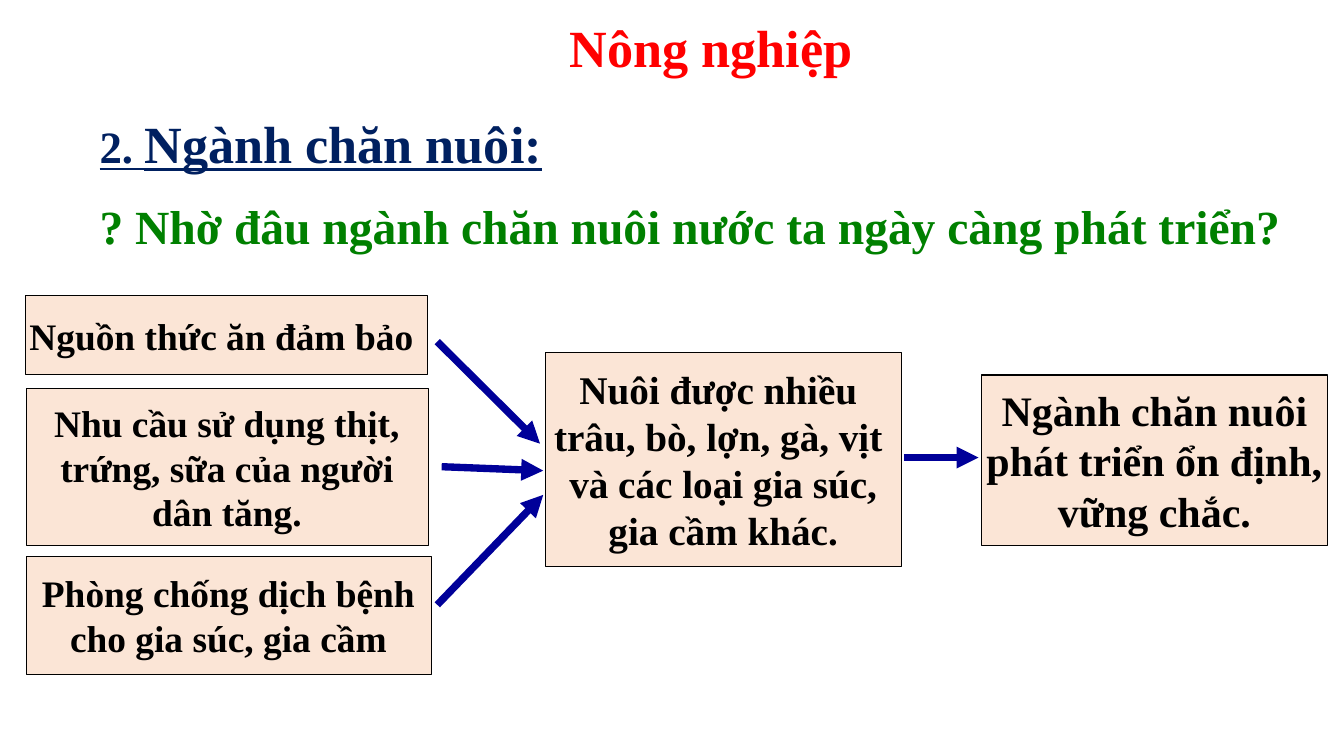
from lxml.etree import SubElement
from pptx import Presentation
from pptx.dml.color import RGBColor
from pptx.enum.shapes import MSO_CONNECTOR, MSO_SHAPE
from pptx.enum.text import MSO_ANCHOR, MSO_AUTO_SIZE, PP_ALIGN
from pptx.oxml.ns import qn
from pptx.util import Cm, Pt

FONT = "Times New Roman"
COLORS = {
    "title": "FF0000",
    "heading": "002060",
    "query": "008000",
    "ink": "000000",
    "box": "FBE5D6",
    "arrow": "000099",
}

BOXES = [
    ((0.64, 7.44, 10.13, 2.01), 26.7, ["Nguồn thức ăn đảm bảo "]),
    ((0.66, 9.8, 10.13, 3.94), 26.7,
     ["Nhu cầu sử dụng thịt,", "trứng, sữa của người", "dân tăng."]),
    ((0.66, 14.02, 10.21, 2.97), 26.7,
     ["Phòng chống dịch bệnh", "cho gia súc, gia cầm"]),
    ((13.74, 8.89, 8.97, 5.38), 28,
     ["Nuôi được nhiều ", "trâu, bò, lợn, gà, vịt ",
      "và các loại gia súc,", "gia cầm khác."]),
    ((24.74, 9.45, 8.71, 4.29), 30,
     ["Ngành chăn nuôi", " phát triển ổn định, ", "vững chắc."]),
]

ARROWS = [
    (11.02, 15.24, 13.69, 12.47),
    (11.02, 8.61, 13.61, 11.18),
    (22.78, 11.53, 24.66, 11.53),
    (11.13, 11.76, 13.69, 11.86),
]

LABELS = [
    ((2.26, 4.83, 30.56, 1.7), "query", PP_ALIGN.LEFT, False,
     [("? Nhờ đâu ngành chăn nuôi nước ta ngày càng phát triển?", 34)]),
    ((2.26, 2.69, 12.7, 1.47), "heading", PP_ALIGN.LEFT, True,
     [("2. ", 32), ("Ngành chăn nuôi:", 37.3)]),
    ((5.64, 0.25, 24.56, 1.85), "title", PP_ALIGN.CENTER, False,
     [("Nông nghiệp", 37.3)]),
]


def tint(name):
    return RGBColor.from_string(COLORS[name])


def style(run, size, color, under=False):
    font = run.font
    font.name = FONT
    font.size = Pt(size)
    font.bold = True
    font.color.rgb = tint(color)
    if under:
        font.underline = True


def add_box(slide, area, size, lines):
    box = slide.shapes.add_shape(MSO_SHAPE.RECTANGLE, *map(Cm, area))
    box.shadow.inherit = False
    box.fill.solid()
    box.fill.fore_color.rgb = tint("box")
    box.line.color.rgb = tint("ink")
    box.line.width = Pt(0.75)
    frame = box.text_frame
    frame.word_wrap = False
    frame.vertical_anchor = MSO_ANCHOR.MIDDLE
    frame.text = "\n".join(lines)
    for para in frame.paragraphs:
        para.alignment = PP_ALIGN.CENTER
        for run in para.runs:
            style(run, size, "ink")


def add_arrow(slide, ends):
    arrow = slide.shapes.add_connector(MSO_CONNECTOR.STRAIGHT, *map(Cm, ends))
    arrow.line.color.rgb = tint("arrow")
    arrow.line.width = Pt(5.25)
    SubElement(arrow.line._get_or_add_ln(), qn("a:tailEnd"), type="triangle")
    SubElement(arrow._element.spPr, qn("a:effectLst"))


def add_label(slide, area, color, align, under, parts):
    frame = slide.shapes.add_textbox(*map(Cm, area)).text_frame
    frame.word_wrap = True
    frame.auto_size = MSO_AUTO_SIZE.NONE
    para = frame.paragraphs[0]
    para.alignment = align
    for text, size in parts:
        run = para.add_run()
        run.text = text
        style(run, size, color, under)


def main():
    deck = Presentation()
    deck.slide_width, deck.slide_height = Cm(33.87), Cm(19.05)
    slide = deck.slides.add_slide(deck.slide_layouts[6])
    for box in BOXES:
        add_box(slide, *box)
    for ends in ARROWS:
        add_arrow(slide, ends)
    for label in LABELS:
        add_label(slide, *label)
    deck.save("out.pptx")


if __name__ == "__main__":
    main()
